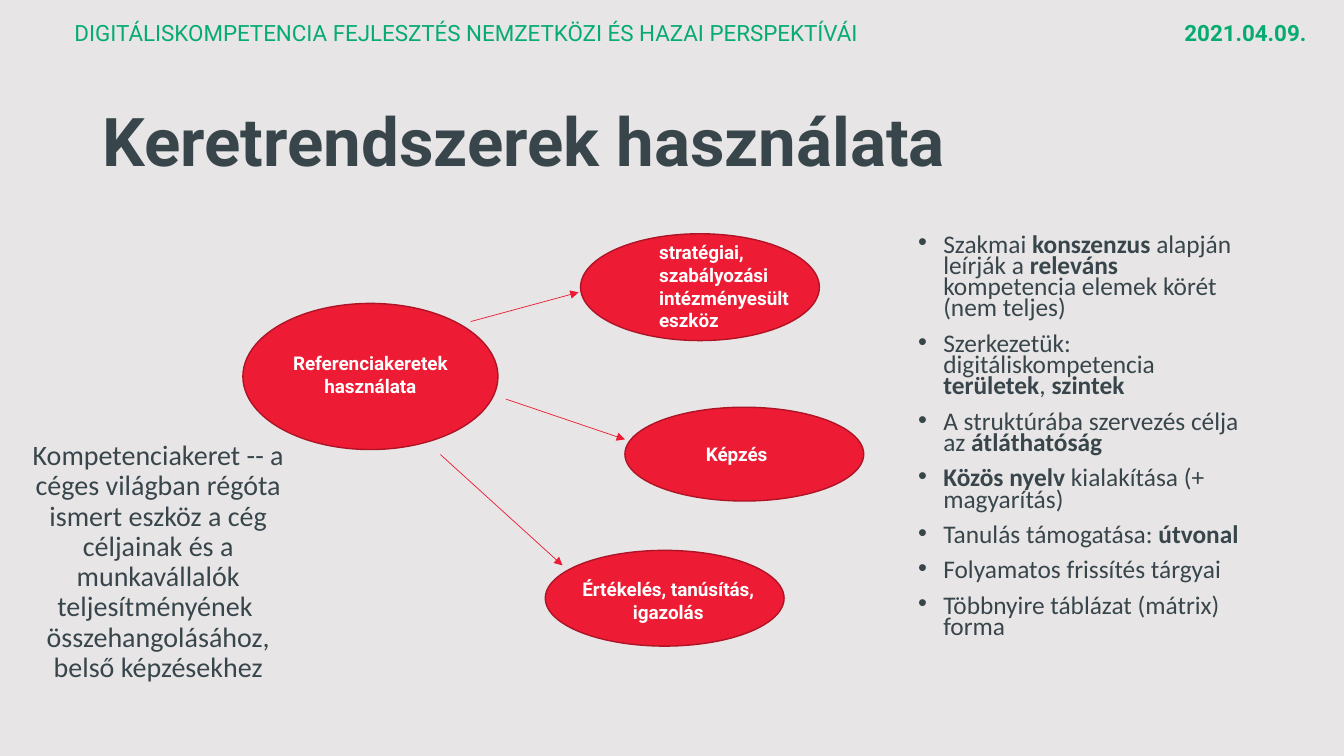
from lxml import etree
from pptx import Presentation, util as u
from pptx.dml.color import RGBColor
from pptx.enum import shapes, text
from pptx.oxml import ns


class Theme:
    background = RGBColor.from_string("E7E5E5")
    ink = RGBColor.from_string("38464C")
    green = RGBColor.from_string("06AB71")
    red = RGBColor.from_string("ED1B34")
    dark_red = RGBColor.from_string("AF1426")
    white = RGBColor.from_string("FFFFFF")
    heading_font, body_font = "Roboto", "Calibri"
    title, header, note, bullet, label = 48, 16, 20, 18.1, 13.5
    outline, arrow = 1, 0.5
    indent = 18


LEFT, CENTER, RIGHT = (text.PP_ALIGN.LEFT, text.PP_ALIGN.CENTER,
                       text.PP_ALIGN.RIGHT)


class Board:
    """Draws the elements of one slide in one style."""

    def __init__(self, slide, theme):
        self.slide, self.theme = slide, theme
        slide.background.fill.solid()
        slide.background.fill.fore_color.rgb = theme.background

    def frame(self, box):
        frame = self.slide.shapes.add_textbox(*map(u.Pt, box)).text_frame
        frame.word_wrap = True
        return frame

    def style(self, font, name, size, color, bold):
        font.name, font.size, font.bold = name, u.Pt(size), bold
        font.color.rgb = color

    def words(self, box, content, size, color, name=Theme.heading_font,
              bold=True, align=LEFT, spacing=1.0, anchor=text.MSO_ANCHOR.TOP):
        frame = self.frame(box)
        frame.vertical_anchor = anchor
        paragraph = frame.paragraphs[0]
        paragraph.text = content
        paragraph.alignment, paragraph.line_spacing = align, spacing
        for run in paragraph.runs:
            self.style(run.font, name, size, color, bold)

    def bullets(self, box, items):
        """Parts of an item between asterisks are bold."""
        frame = self.frame(box)
        for number, item in enumerate(items):
            paragraph = frame.add_paragraph() if number else frame.paragraphs[0]
            paragraph.line_spacing = 0.7
            paragraph.space_before = u.Pt(10 if number else 0)
            props = paragraph._p.get_or_add_pPr()
            indent = u.Pt(self.theme.indent)
            props.set("marL", str(indent))
            props.set("indent", str(-indent))
            etree.SubElement(props, ns.qn("a:buFont")).set("typeface", "Arial")
            etree.SubElement(props, ns.qn("a:buChar")).set("char", "•")
            for part, words in enumerate(item.split("*")):
                if words:
                    run = paragraph.add_run()
                    run.text = words
                    self.style(run.font, self.theme.body_font,
                               self.theme.bullet, self.theme.ink, part % 2 == 1)

    def ellipse(self, box):
        oval = self.slide.shapes.add_shape(
            shapes.MSO_SHAPE.OVAL, *map(u.Pt, box))
        oval.shadow.inherit = False
        oval.fill.solid()
        oval.fill.fore_color.rgb = self.theme.red
        oval.line.color.rgb = self.theme.dark_red
        oval.line.width = u.Pt(self.theme.outline)

    def arrow(self, start, end):
        link = self.slide.shapes.add_connector(
            shapes.MSO_CONNECTOR.STRAIGHT, *map(u.Pt, start + end))
        link.line.color.rgb = self.theme.red
        link.line.width = u.Pt(self.theme.arrow)
        line = link.line._get_or_add_ln()
        etree.SubElement(line, ns.qn("a:tailEnd")).set("type", "triangle")
        etree.SubElement(link._element.spPr, ns.qn("a:effectLst"))


def main():
    deck = Presentation()
    deck.slide_width, deck.slide_height = u.Pt(960), u.Pt(540)
    theme = Theme()
    board = Board(deck.slides.add_slide(deck.slide_layouts[6]), theme)

    # Title and header line
    board.words((66.2, 72, 828, 61.2), "Keretrendszerek használata",
                theme.title, theme.ink, spacing=0.9,
                anchor=text.MSO_ANCHOR.BOTTOM)
    board.words((724.3, 10.1, 216, 28.8), "2021.04.09.",
                theme.header, theme.green, align=RIGHT)
    board.words((46.1, 10.1, 668.2, 28.8),
                "DIGITÁLISKOMPETENCIA FEJLESZTÉS NEMZETKÖZI ÉS HAZAI "
                "PERSPEKTÍVÁI", theme.header, theme.green, bold=False)

    # Note on the left
    board.words((4.3, 311.8, 217.4, 176.4),
                "Kompetenciakeret -- a céges világban régóta ismert eszköz "
                "a cég céljainak és a munkavállalók teljesítményének "
                "\nösszehangolásához, belső képzésekhez",
                theme.note, theme.ink, theme.body_font, False, CENTER, 0.9)

    # Features on the right
    board.bullets((648.7, 165, 253.4, 291.5), [
        "Szakmai *konszenzus* alapján leírják a *releváns* kompetencia "
        "elemek körét (nem teljes)",
        "Szerkezetük: digitáliskompetencia *területek*, *szintek*",
        "A struktúrába szervezés célja az *átláthatóság*",
        "*Közös nyelv* kialakítása (+ magyarítás)",
        "Tanulás támogatása: *útvonal*",
        "Folyamatos frissítés tárgyai",
        "Többnyire táblázat (mátrix) forma",
    ])

    # Diagram: ellipse, label box, label, alignment
    uses = [
        ((173.5, 216.7, 182.2, 104.4), (195.8, 247.7, 137.5, 40.3),
         "Referenciakeretek használata", CENTER),
        ((414.7, 167, 170.6, 76.3), (463.7, 168.5, 136.1, 72.7),
         "stratégiai, szabályozási intézményesült eszköz", LEFT),
        ((446.4, 290.9, 170.6, 67), (463.7, 312.5, 125, 23.8),
         "Képzés", CENTER),
        ((389.5, 393.1, 170.6, 68.4), (404.6, 409, 145.4, 40.3),
         "Értékelés, tanúsítás, igazolás", CENTER),
    ]
    for oval, *_ in uses:
        board.ellipse(oval)
    for start, end in [((336.2, 229.7), (413.3, 208.8)),
                       ((361.4, 285.1), (446.4, 313.9)),
                       ((314.6, 324.7), (401.8, 403.9))]:
        board.arrow(start, end)
    for _, box, label, align in uses:
        board.words(box, label, theme.label, theme.white, align=align)

    deck.save("out.pptx")


if __name__ == "__main__":
    main()
